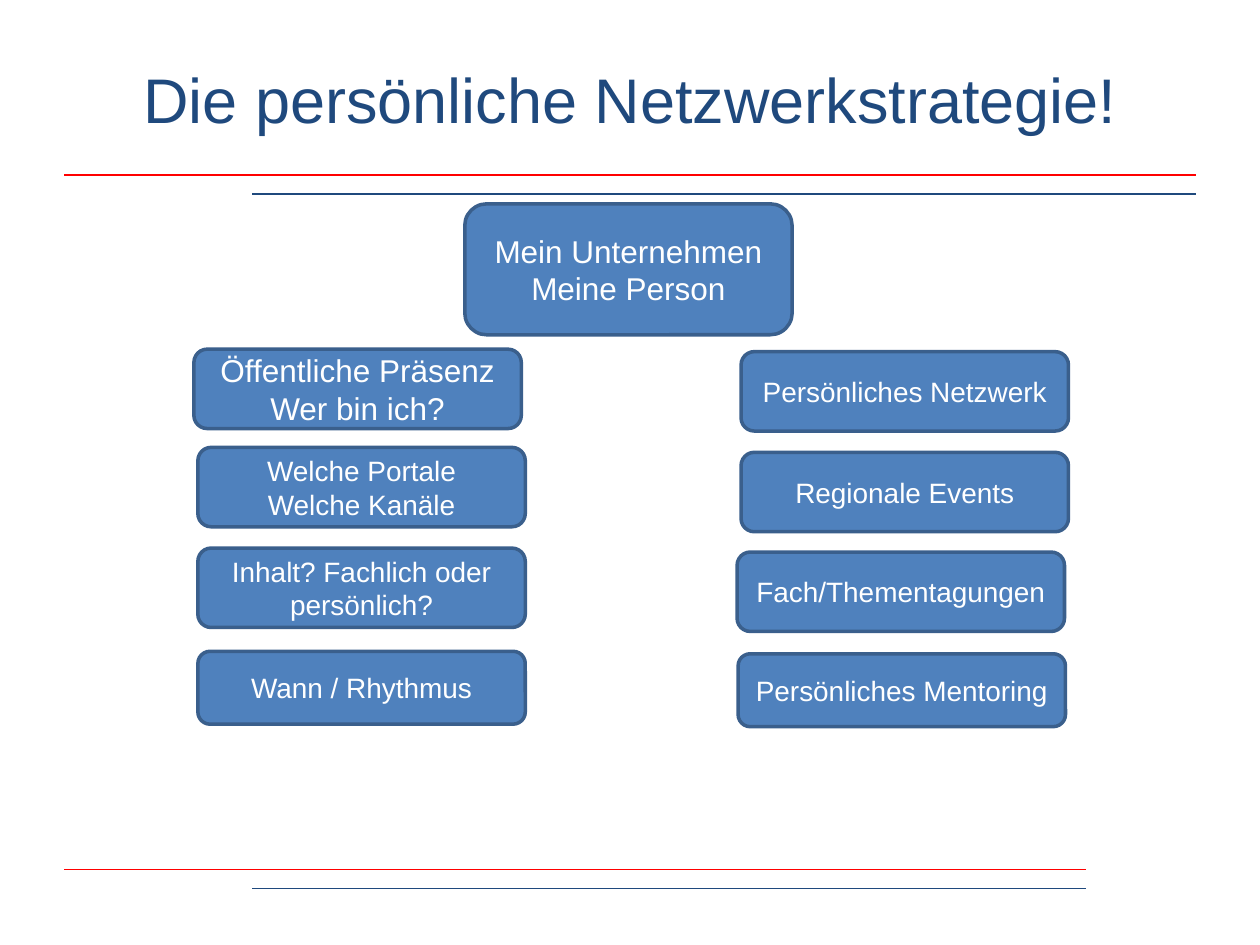
from dataclasses import dataclass

import pptx
import pptx.dml.color
import pptx.enum.shapes
import pptx.enum.text
import pptx.oxml.ns
import pptx.util
from lxml import etree

Cm = pptx.util.Cm
Pt = pptx.util.Pt

COLORS = {
    "navy": "1F497D",
    "red": "FF0000",
    "box": "4F81BD",
    "border": "3A5F8C",
    "white": "FFFFFF",
}
FONT = "Arial"
BOX_WIDTH = 6.6


@dataclass
class Rule:
    left: float
    right: float
    y: float
    color: str


@dataclass
class Box:
    left: float
    top: float
    lines: tuple[str, ...]
    height: float = 1.6
    size: int = 16


RULES = [
    Rule(1.3, 24.1, 3.53, "red"),
    Rule(5.08, 24.1, 3.91, "navy"),
    Rule(1.3, 21.9, 17.53, "red"),
    Rule(5.08, 21.9, 17.91, "navy"),
]

BOXES = [
    Box(9.37, 4.11, ("Mein Unternehmen", "Meine Person"), 2.64, 18),
    Box(3.91, 7.04, ("Öffentliche Präsenz", "Wer bin ich?"), size=18),
    Box(3.99, 9.02, ("Welche Portale", "Welche Kanäle")),
    Box(3.99, 11.05, ("Inhalt? Fachlich oder persönlich?",)),
    Box(3.99, 13.13, ("Wann / Rhythmus",), 1.47),
    Box(14.94, 7.09, ("Persönliches Netzwerk",)),
    Box(14.94, 9.12, ("Regionale Events",)),
    Box(14.86, 11.13, ("Fach/Thementagungen",)),
    Box(14.88, 13.18, ("Persönliches Mentoring",), 1.47),
]


def rgb(name: str) -> pptx.dml.color.RGBColor:
    return pptx.dml.color.RGBColor.from_string(COLORS[name])


def write(tf, lines: tuple[str, ...], size: int, color: str) -> None:
    tf.word_wrap = True
    tf.vertical_anchor = pptx.enum.text.MSO_ANCHOR.MIDDLE
    for i, line in enumerate(lines):
        p = tf.add_paragraph() if i else tf.paragraphs[0]
        p.alignment = pptx.enum.text.PP_ALIGN.CENTER
        r = p.add_run()
        r.text = line
        r.font.name = FONT
        r.font.size = Pt(size)
        r.font.color.rgb = rgb(color)


def draw_rule(s, rule: Rule) -> None:
    line = s.shapes.add_connector(
        pptx.enum.shapes.MSO_CONNECTOR.STRAIGHT,
        Cm(rule.left), Cm(rule.y), Cm(rule.right), Cm(rule.y),
    )
    line.line.color.rgb = rgb(rule.color)
    line.line.width = Pt(1)
    etree.SubElement(line._element.spPr, pptx.oxml.ns.qn("a:effectLst"))


def draw_box(s, box: Box) -> None:
    sp = s.shapes.add_shape(
        pptx.enum.shapes.MSO_SHAPE.ROUNDED_RECTANGLE,
        Cm(box.left), Cm(box.top), Cm(BOX_WIDTH), Cm(box.height),
    )
    sp.shadow.inherit = False
    sp.fill.solid()
    sp.fill.fore_color.rgb = rgb("box")
    sp.line.color.rgb = rgb("border")
    sp.line.width = Pt(2)
    write(sp.text_frame, box.lines, box.size, "white")


def main() -> None:
    prs = pptx.Presentation()
    prs.slide_width = Cm(25.4)
    prs.slide_height = Cm(19.05)
    s = prs.slides.add_slide(prs.slide_layouts[6])
    for rule in RULES:
        draw_rule(s, rule)
    title = s.shapes.add_textbox(Cm(1.27), Cm(0.8), Cm(22.86), Cm(2.36))
    write(title.text_frame, ("Die persönliche Netzwerkstrategie!",), 36, "navy")
    for box in BOXES:
        draw_box(s, box)
    prs.save("out.pptx")


if __name__ == "__main__":
    main()
